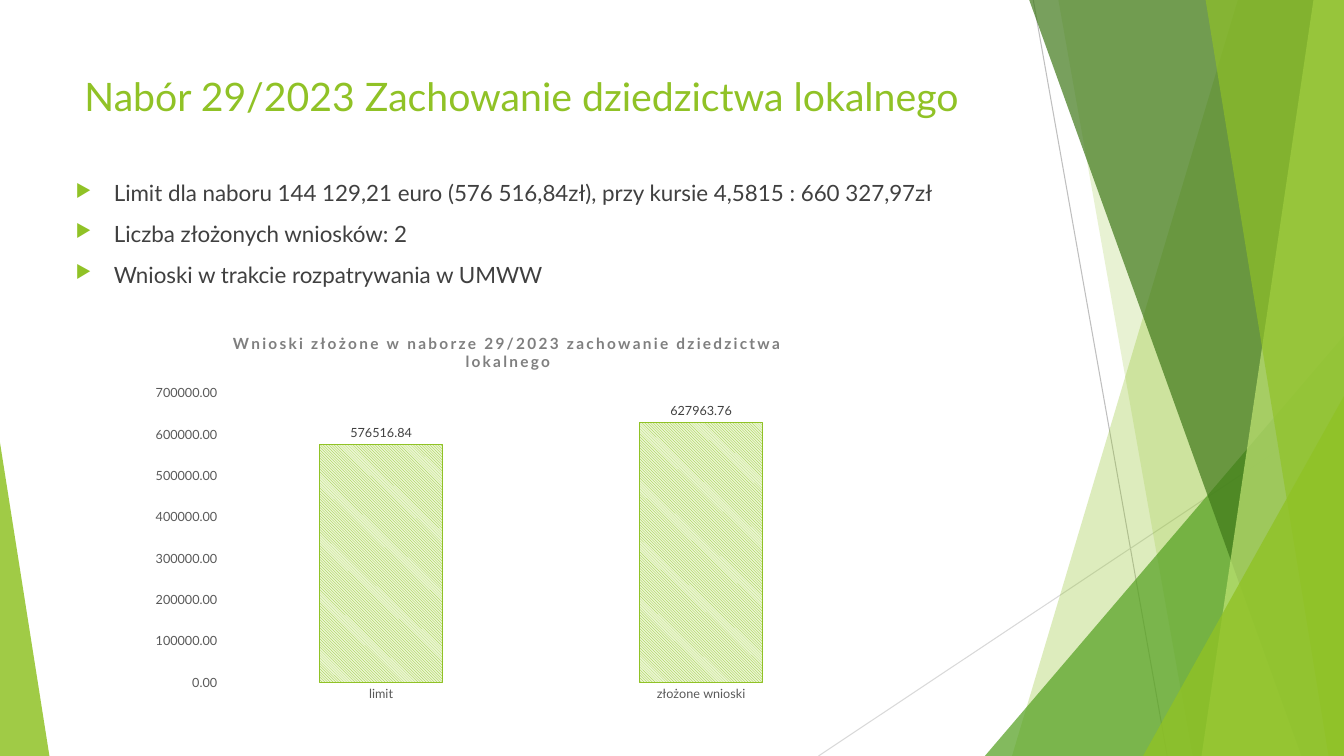
from dataclasses import dataclass

from lxml.etree import SubElement
from pptx import Presentation
from pptx.chart.data import CategoryChartData
from pptx.dml.color import RGBColor
from pptx.enum.chart import XL_CHART_TYPE as ChartType
from pptx.enum.chart import XL_LABEL_POSITION as LabelPosition
from pptx.enum.chart import XL_TICK_MARK as TickMark
from pptx.enum.dml import MSO_PATTERN as Pattern
from pptx.enum.shapes import MSO_CONNECTOR as Connector
from pptx.enum.shapes import MSO_SHAPE as ShapeKind
from pptx.enum.text import MSO_ANCHOR as Anchor
from pptx.oxml import parse_xml
from pptx.oxml.ns import nsdecls, qn
from pptx.util import Inches, Pt

WIDTH, HEIGHT = Inches(13.33), Inches(7.5)
FONT = "Lato"
LIME, TEXT, AXIS, HEADING = "90C226", "404040", "595959", "7F7F7F"


@dataclass(frozen=True)
class Area:
    left: float
    top: float
    width: float
    height: float

    def box(self) -> tuple[int, int, int, int]:
        return across(self.left), down(self.top), across(self.width), down(self.height)


@dataclass(frozen=True)
class Ray:
    start: tuple[float, float]
    end: tuple[float, float]
    color: str


@dataclass(frozen=True)
class Panel:
    top_left: float
    bottom_left: float
    color: str
    opacity: int


@dataclass(frozen=True)
class Wedge:
    left: float
    top: float
    width: float
    apex: int
    color: str
    opacity: int


RAYS = [
    Ray((76.88, 0), (86.85, 100), "BFBFBF"),
    Ray((100, 53.73), (60.9, 100), "D9D9D9"),
]
FACETS = [
    Panel(92.1, 75.3, LIME, 30),
    Panel(78.75, 88.73, LIME, 20),
    Wedge(73.28, 44.4, 26.72, 1, "54A021", 72),
    Panel(76.58, 96.83, "3F7819", 70),
    Panel(97.73, 89.4, "C0E474", 70),
    Panel(89.7, 98.85, LIME, 65),
    Wedge(85.05, 52.4, 14.95, 1, LIME, 80),
    Wedge(0, 58.53, 3.68, 0, LIME, 85),
]
TITLE_AREA = Area(5.55, 8.93, 70.8, 9.33)
BODY_AREA = Area(4.88, 23.07, 73.05, 70.8)
CHART_AREA = Area(10.5, 41.73, 54.6, 52.13)
PLOT_PERCENTS = {"x": 10.9, "y": 19.7, "w": 87.2, "h": 73.4}
BULLETS = [
    "Limit dla naboru 144 129,21 euro (576 516,84zł), przy kursie 4,5815 : 660 327,97zł",
    "Liczba złożonych wniosków: 2",
    "Wnioski w trakcie rozpatrywania w UMWW",
]
AMOUNTS = {"limit": 576516.84, "złożone wnioski": 627963.76}


def across(percent: float) -> int:
    return round(WIDTH * percent / 100)


def down(percent: float) -> int:
    return round(HEIGHT * percent / 100)


def rgb(color: str) -> RGBColor:
    return RGBColor.from_string(color)


def set_font(font, size: float, color: str, bold: bool = False) -> None:
    font.name, font.size, font.bold = FONT, Pt(size), bold
    font.color.rgb = rgb(color)


def draw_ray(slide, ray: Ray) -> None:
    (x1, y1), (x2, y2) = ray.start, ray.end
    connector = slide.shapes.add_connector(
        Connector.STRAIGHT, across(x1), down(y1), across(x2), down(y2))
    connector.line.color.rgb = rgb(ray.color)
    connector.line.width = Pt(0.75)
    SubElement(connector._element.spPr, qn("a:effectLst"))


def draw_facet(slide, facet: Panel | Wedge) -> None:
    if isinstance(facet, Panel):
        builder = slide.shapes.build_freeform(across(facet.top_left), 0)
        builder.add_line_segments(
            [(WIDTH, 0), (WIDTH, HEIGHT), (across(facet.bottom_left), HEIGHT)])
        shape = builder.convert_to_shape()
    else:
        area = Area(facet.left, facet.top, facet.width, 100 - facet.top)
        shape = slide.shapes.add_shape(ShapeKind.ISOSCELES_TRIANGLE, *area.box())
        shape.adjustments[0] = facet.apex
    shape.shadow.inherit = False
    shape.line.fill.background()
    shape.fill.solid()
    shape.fill.fore_color.rgb = rgb(facet.color)
    color_element = shape._element.spPr.find(".//" + qn("a:srgbClr"))
    SubElement(color_element, qn("a:alpha"), val=str(facet.opacity * 1000))


def add_text(slide, area: Area, lines: list[str], size: float, color: str) -> list:
    frame = slide.shapes.add_textbox(*area.box()).text_frame
    frame.word_wrap = True
    frame.vertical_anchor = Anchor.TOP
    frame.text = "\n".join(lines)
    for paragraph in frame.paragraphs:
        set_font(paragraph.font, size, color)
    return list(frame.paragraphs)


def add_bullet(paragraph) -> None:
    paragraph.space_before = Pt(10)
    properties = paragraph._p.get_or_add_pPr()
    properties.set("marL", str(Inches(0.38)))
    properties.set("indent", str(-Inches(0.38)))
    marks = [
        f'<a:buClr {nsdecls("a")}><a:srgbClr val="{LIME}"/></a:buClr>',
        f'<a:buSzPct {nsdecls("a")} val="80000"/>',
        f'<a:buFont {nsdecls("a")} typeface="OpenSymbol"/>',
        f'<a:buChar {nsdecls("a")} char="▶"/>',
    ]
    defaults = properties.find(qn("a:defRPr"))
    for mark in marks:
        defaults.addprevious(parse_xml(mark))


def style_axis(axis) -> None:
    axis.has_major_gridlines = False
    axis.major_tick_mark = axis.minor_tick_mark = TickMark.NONE
    axis.format.line.fill.background()
    set_font(axis.tick_labels.font, 9, AXIS)


def place_plot(chart) -> None:
    plot_area = chart._chartSpace.chart.plotArea
    for old_layout in plot_area.findall(qn("c:layout")):
        plot_area.remove(old_layout)
    layout = parse_xml(f'<c:layout {nsdecls("c")}><c:manualLayout/></c:layout>')
    shares = {name: percent / 100 for name, percent in PLOT_PERCENTS.items()}
    settings = {"layoutTarget": "inner", "xMode": "edge", "yMode": "edge", **shares}
    for name, value in settings.items():
        SubElement(layout[0], qn(f"c:{name}"), val=str(value))
    plot_area.insert(0, layout)


def add_amounts_chart(slide) -> None:
    data = CategoryChartData(number_format="0.00")
    data.categories = list(AMOUNTS)
    data.add_series("Series 1", list(AMOUNTS.values()))
    chart = slide.shapes.add_chart(
        ChartType.COLUMN_CLUSTERED, *CHART_AREA.box(), data).chart
    set_font(chart.font, 10, "000000")
    chart.has_legend = False
    chart.has_title = True
    title = chart.chart_title
    title.include_in_layout = False
    title.text_frame.text = "Wnioski złożone w naborze 29/2023 zachowanie dziedzictwa lokalnego"
    paragraph = title.text_frame.paragraphs[0]
    set_font(paragraph.font, 11, HEADING, bold=True)
    paragraph._p.pPr.find(qn("a:defRPr")).set("spc", "150")
    place_plot(chart)

    style_axis(chart.category_axis)
    amounts = chart.value_axis
    style_axis(amounts)
    amounts.minimum_scale, amounts.maximum_scale, amounts.major_unit = 0, 700000, 100000
    amounts.tick_labels.number_format = "0.00"
    amounts.tick_labels.number_format_is_linked = False

    plot = chart.plots[0]
    plot.gap_width = 160
    plot.vary_by_categories = False
    series = plot.series[0]
    fill, line = series.format.fill, series.format.line
    fill.patterned()
    fill.pattern = Pattern.LIGHT_DOWNWARD_DIAGONAL
    fill.fore_color.rgb, fill.back_color.rgb = rgb(LIME), rgb("EAF6D1")
    line.color.rgb, line.width = rgb(LIME), Pt(0.75)
    labels = series.data_labels
    labels.show_value = True
    labels.position = LabelPosition.OUTSIDE_END
    labels.number_format, labels.number_format_is_linked = "0.00", False
    set_font(labels.font, 9, TEXT)


def main() -> None:
    presentation = Presentation()
    presentation.slide_width, presentation.slide_height = WIDTH, HEIGHT
    slide = presentation.slides.add_slide(presentation.slide_layouts[6])
    for ray in RAYS:
        draw_ray(slide, ray)
    for facet in FACETS:
        draw_facet(slide, facet)
    add_text(slide, TITLE_AREA, ["Nabór 29/2023 Zachowanie dziedzictwa lokalnego"], 28, LIME)
    for paragraph in add_text(slide, BODY_AREA, BULLETS, 16, TEXT):
        add_bullet(paragraph)
    add_amounts_chart(slide)
    presentation.save("out.pptx")


if __name__ == "__main__":
    main()
